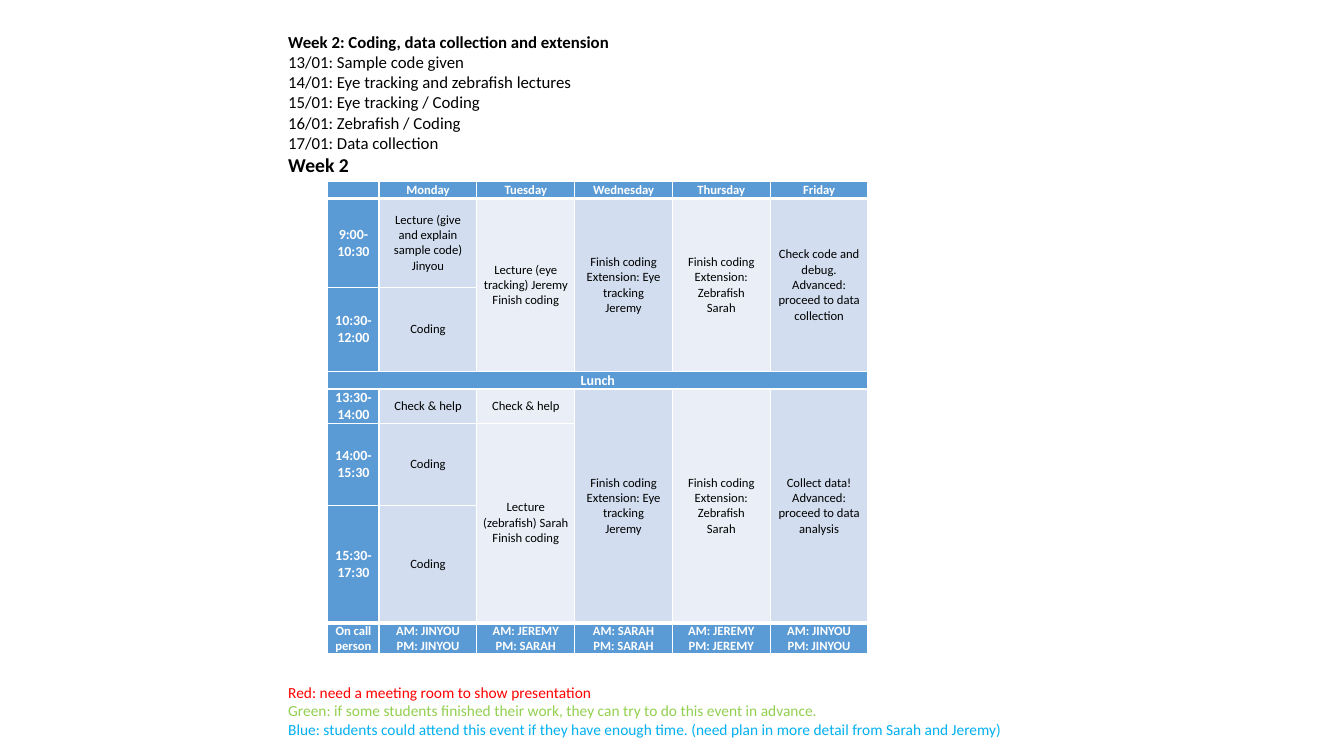
import pptx
import pptx.dml.color
import pptx.enum.text
import pptx.oxml
import pptx.oxml.ns
import pptx.util

Inches, Pt = pptx.util.Inches, pptx.util.Pt
RGB = pptx.dml.color.RGBColor.from_string
FONT = "Calibri"
COLORS = {"black": "000000", "white": "FFFFFF", "header": "5B9BD5",
          "odd": "D2DEEF", "even": "EAEFF7",
          "red": "FF0000", "green": "92D050", "blue": "00B0F0"}

# text, size, colour, bold
NOTES = [
    ("Week 2: Coding, data collection and extension", 12, "black", True),
    ("13/01: Sample code given", 12, "black", False),
    ("14/01: Eye tracking and zebrafish lectures", 12, "black", False),
    ("15/01: Eye tracking / Coding", 12, "black", False),
    ("16/01: Zebrafish / Coding", 12, "black", False),
    ("17/01: Data collection", 12, "black", False),
    ("Week 2", 14, "black", True),
    ("Red: need a meeting room to show presentation", 11, "red", False),
    ("Green: if some students finished their work, they can try to do this event in advance.",
     11, "green", False),
    ("Blue: students could attend this event if they have enough time. "
     "(need plan in more detail from Sarah and Jeremy)", 11, "blue", False),
]
LEGEND_START = 7
TABLE_GAP = 362  # points left for the timetable above the legend

EYE = "Finish coding\nExtension: Eye tracking\nJeremy"
ZEBRAFISH = "Finish coding\nExtension: Zebrafish\nSarah"
TIMETABLE = [
    ["", "Monday", "Tuesday", "Wednesday", "Thursday", "Friday"],
    ["9:00-10:30", "Lecture (give and explain sample code) Jinyou",
     "Lecture (eye tracking) Jeremy\nFinish coding", EYE, ZEBRAFISH,
     "Check code and debug.\nAdvanced: proceed to data collection"],
    ["10:30-12:00", "Coding", "", "", "", ""],
    ["Lunch", "", "", "", "", ""],
    ["13:30-14:00", "Check & help", "Check & help", EYE, ZEBRAFISH,
     "Collect data!\nAdvanced: proceed to data analysis"],
    ["14:00-15:30", "Coding", "Lecture (zebrafish) Sarah\nFinish coding", "", "", ""],
    ["15:30-17:30", "Coding", "", "", "", ""],
    ["On call person", "AM: JINYOU\nPM: JINYOU", "AM: JEREMY\nPM: SARAH",
     "AM: SARAH\nPM: SARAH", "AM: JEREMY\nPM: JEREMY", "AM: JINYOU\nPM: JINYOU"],
]
COL_WIDTHS = [0.51] + [0.97] * 5
ROW_HEIGHTS = [0.17, 0.88, 0.84, 0.17, 0.34, 0.82, 1.16, 0.31]
LUNCH, LAST = 3, len(TIMETABLE) - 1
# first row, first column, last row, last column
MERGES = ([(1, c, 2, c) for c in range(2, 6)] + [(LUNCH, 0, LUNCH, 5), (5, 2, 6, 2)]
          + [(4, c, 6, c) for c in range(3, 6)])


def style_paragraph(p, size, color, bold):
    p.font.name, p.font.size, p.font.bold = FONT, Pt(size), bold
    p.font.color.rgb = RGB(COLORS[color])


def set_borders(cell, widths):
    """Draw white borders; widths maps a side (L, R, T, B) to points."""
    tcPr = cell._tc.get_or_add_tcPr()
    for side, width in widths.items():
        tcPr.append(pptx.oxml.parse_xml(
            f'<a:ln{side} {pptx.oxml.ns.nsdecls("a")} w="{Pt(width)}"><a:solidFill>'
            f'<a:srgbClr val="{COLORS["white"]}"/></a:solidFill></a:ln{side}>'))


def fill_cell(cell, row, col, text):
    edge = row in (0, LAST)
    heading = edge or col == 0 or row == LUNCH
    set_borders(cell, {"L": 1, "R": 1,
                       "T": 3 if row == LAST else 1, "B": 3 if row == 0 else 1})
    cell.fill.solid()
    cell.fill.fore_color.rgb = RGB(
        COLORS["header" if heading else "odd" if col % 2 else "even"])
    cell.margin_left = cell.margin_right = Inches(0.06)
    cell.margin_top = cell.margin_bottom = 0
    cell.vertical_anchor = pptx.enum.text.MSO_ANCHOR.MIDDLE
    cell.text = text
    for p in cell.text_frame.paragraphs:
        p.alignment = pptx.enum.text.PP_ALIGN.CENTER
        style_paragraph(p, 10 if heading and not edge else 9,
                        "white" if heading else "black", heading)


def add_timetable(slide):
    table = slide.shapes.add_table(
        len(TIMETABLE), len(COL_WIDTHS), Inches(3.25), Inches(1.8),
        Inches(sum(COL_WIDTHS)), Inches(sum(ROW_HEIGHTS))).table
    table.horz_banding = False
    for column, width in zip(table.columns, COL_WIDTHS):
        column.width = Inches(width)
    for row, height in zip(table.rows, ROW_HEIGHTS):
        row.height = Inches(height)
    for r, texts in enumerate(TIMETABLE):
        for c, text in enumerate(texts):
            fill_cell(table.cell(r, c), r, c, text)
    for top, left, bottom, right in MERGES:
        table.cell(top, left).merge(table.cell(bottom, right))


def add_notes(slide):
    tf = slide.shapes.add_textbox(
        Inches(2.76), Inches(0.27), Inches(7.35), Inches(7.1)).text_frame
    tf.word_wrap = False
    tf.auto_size = pptx.enum.text.MSO_AUTO_SIZE.SHAPE_TO_FIT_TEXT
    tf.vertical_anchor = pptx.enum.text.MSO_ANCHOR.MIDDLE
    tf.text = "\n".join(note[0] for note in NOTES)
    for p, (_, size, color, bold) in zip(tf.paragraphs, NOTES):
        style_paragraph(p, size, color, bold)
    tf.paragraphs[LEGEND_START].space_before = Pt(TABLE_GAP)


def main():
    prs = pptx.Presentation()
    prs.slide_width, prs.slide_height = Inches(13.33), Inches(7.5)
    slide = prs.slides.add_slide(prs.slide_layouts[6])
    add_timetable(slide)
    add_notes(slide)
    prs.save("out.pptx")


if __name__ == "__main__":
    main()
